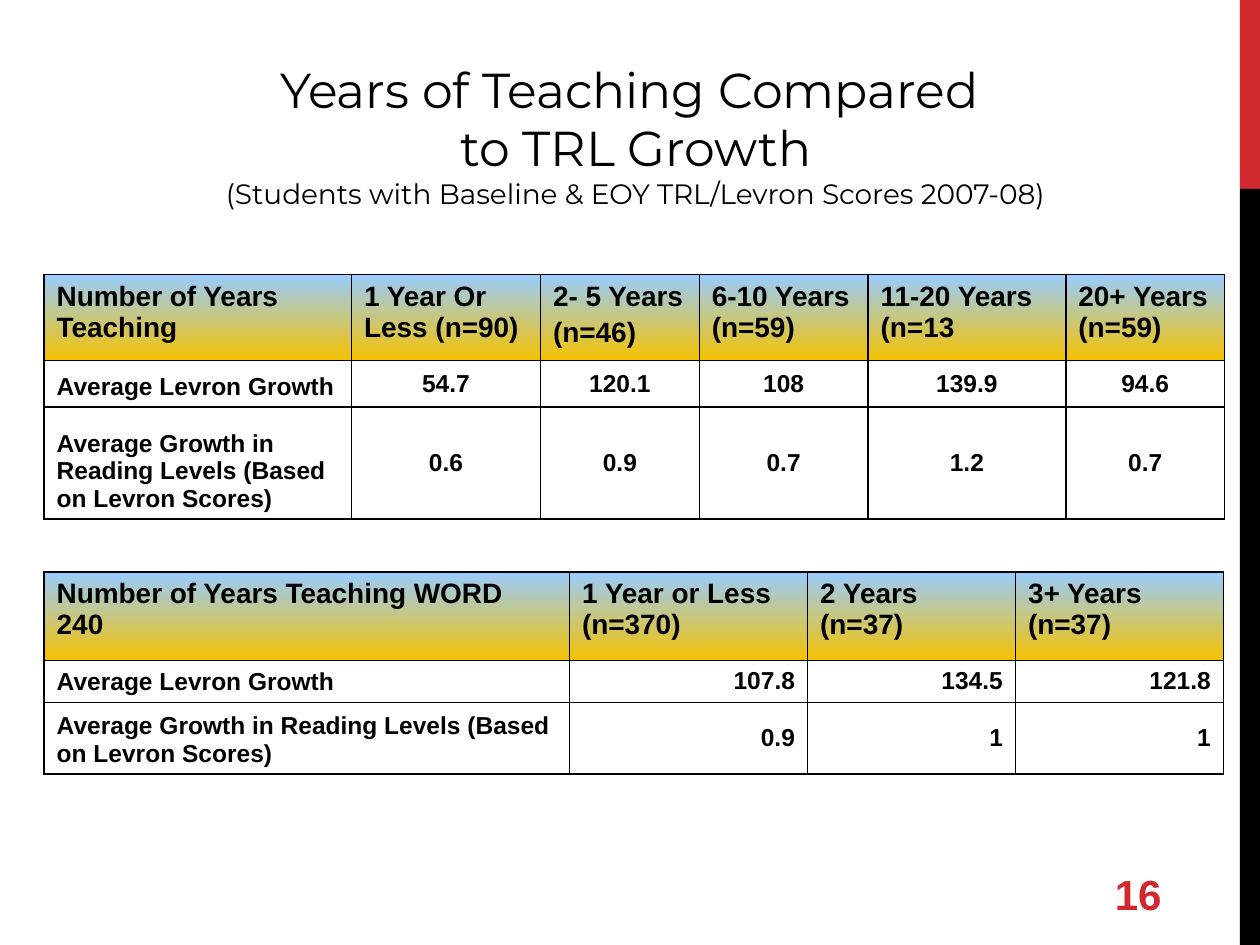
from pptx import Presentation
from pptx.dml.color import RGBColor
from pptx.enum.shapes import MSO_SHAPE
from pptx.enum.text import MSO_ANCHOR, PP_ALIGN
from pptx.oxml import parse_xml
from pptx.oxml.ns import nsdecls
from pptx.util import Inches, Pt

RECTANGLE = MSO_SHAPE.RECTANGLE
TOP, MIDDLE, BOTTOM = MSO_ANCHOR.TOP, MSO_ANCHOR.MIDDLE, MSO_ANCHOR.BOTTOM
LEFT, CENTER, RIGHT = PP_ALIGN.LEFT, PP_ALIGN.CENTER, PP_ALIGN.RIGHT
RED, BLACK, SKY, GOLD = "D1282E", "000000", "99CCFF", "F5C201"


def color(value):
    return RGBColor.from_string(value)


def style(para, size, font="Arial", ink=BLACK, bold=True, align=LEFT):
    para.alignment = align
    para.font.size = Pt(size)
    para.font.name = font
    para.font.bold = bold
    para.font.color.rgb = color(ink)


deck = Presentation()
deck.slide_width, deck.slide_height = Inches(10), Inches(7.5)
page = deck.slides.add_slide(deck.slide_layouts[6])

# Side band: red for the top fifth, black below
band_left, band_split = Inches(9.84), deck.slide_height // 5
for top, bottom, shade in ((0, band_split, RED),
                           (band_split, deck.slide_height, BLACK)):
    band = page.shapes.add_shape(RECTANGLE, band_left, top,
                                 deck.slide_width - band_left, bottom - top)
    band.shadow.inherit = False
    band.fill.solid()
    band.fill.fore_color.rgb = color(shade)
    band.line.fill.background()

# Page number
number = page.shapes.add_textbox(Inches(8.75), Inches(6.83),
                                 Inches(0.75), Inches(0.52))
number.text_frame.word_wrap = True
number.text_frame.vertical_anchor = MIDDLE
number.text_frame.text = "16"
style(number.text_frame.paragraphs[0], 24, ink=RED)

# Title
title = page.shapes.add_textbox(Inches(0.67), Inches(0.42),
                                Inches(8.75), Inches(1.31))
title.text_frame.word_wrap = True
title.text_frame.text = ("Years of Teaching Compared \nto TRL Growth\n"
                         "(Students with Baseline & EOY TRL/Levron Scores 2007-08)")
for para, size in zip(title.text_frame.paragraphs, (28, 28, 16)):
    style(para, size, "Montserrat", bold=False, align=CENTER)

# Tables: top, column widths, row heights, number alignment, rows
growth_labels = ("Average Levron Growth",
                 "Average Growth in Reading Levels (Based on Levron Scores)")
tables = (
    (2.18, (2.44, 1.5, 1.26, 1.34, 1.57, 1.26), (0.68, 0.37, 0.89), CENTER, (
        ("Number of Years\nTeaching", "1 Year Or\nLess (n=90)",
         "2- 5 Years\n(n=46)", "6-10 Years\n(n=59)",
         "11-20 Years\n(n=13", "20+ Years\n(n=59)"),
        (growth_labels[0], "54.7", "120.1", "108", "139.9", "94.6"),
        (growth_labels[1], "0.6", "0.9", "0.7", "1.2", "0.7"))),
    (4.54, (4.17, 1.89, 1.65, 1.65), (0.7, 0.33, 0.56), RIGHT, (
        ("Number of Years Teaching WORD 240", "1 Year or Less (n=370)",
         "2 Years (n=37)", "3+ Years (n=37)"),
        (growth_labels[0], "107.8", "134.5", "121.8"),
        (growth_labels[1], "0.9", "1", "1"))),
)
for top, widths, heights, number_align, rows in tables:
    table = page.shapes.add_table(
        len(rows), len(widths), Inches(0.35), Inches(top),
        Inches(sum(widths)), Inches(sum(heights))).table
    table.first_row = table.horz_banding = False
    for column, width in zip(table.columns, widths):
        column.width = Inches(width)
    for row, height in zip(table.rows, heights):
        row.height = Inches(height)

    for r, texts in enumerate(rows):
        for c, text in enumerate(texts):
            cell = table.cell(r, c)
            cell.text = text
            # Cell borders come before the fill in the cell properties
            for side in ("lnL", "lnR", "lnT", "lnB"):
                cell._tc.get_or_add_tcPr().append(parse_xml(
                    f'<a:{side} {nsdecls("a")} w="{Pt(1)}"><a:solidFill>'
                    f'<a:srgbClr val="{BLACK}"/></a:solidFill></a:{side}>'))
            if r == 0:
                size, align, anchor = 16, LEFT, TOP
                cell.fill.gradient()
                cell.fill.gradient_angle = 270
                for stop, shade in zip(cell.fill.gradient_stops, (SKY, GOLD)):
                    stop.color.rgb = color(shade)
            else:
                size = 14
                align, anchor = (number_align, MIDDLE) if c else (LEFT, BOTTOM)
                cell.fill.background()
            cell.vertical_anchor = anchor
            for para in cell.text_frame.paragraphs:
                style(para, size, align=align)
                if para.text == "(n=46)":
                    para.space_before = Pt(3.2)

deck.save("out.pptx")
